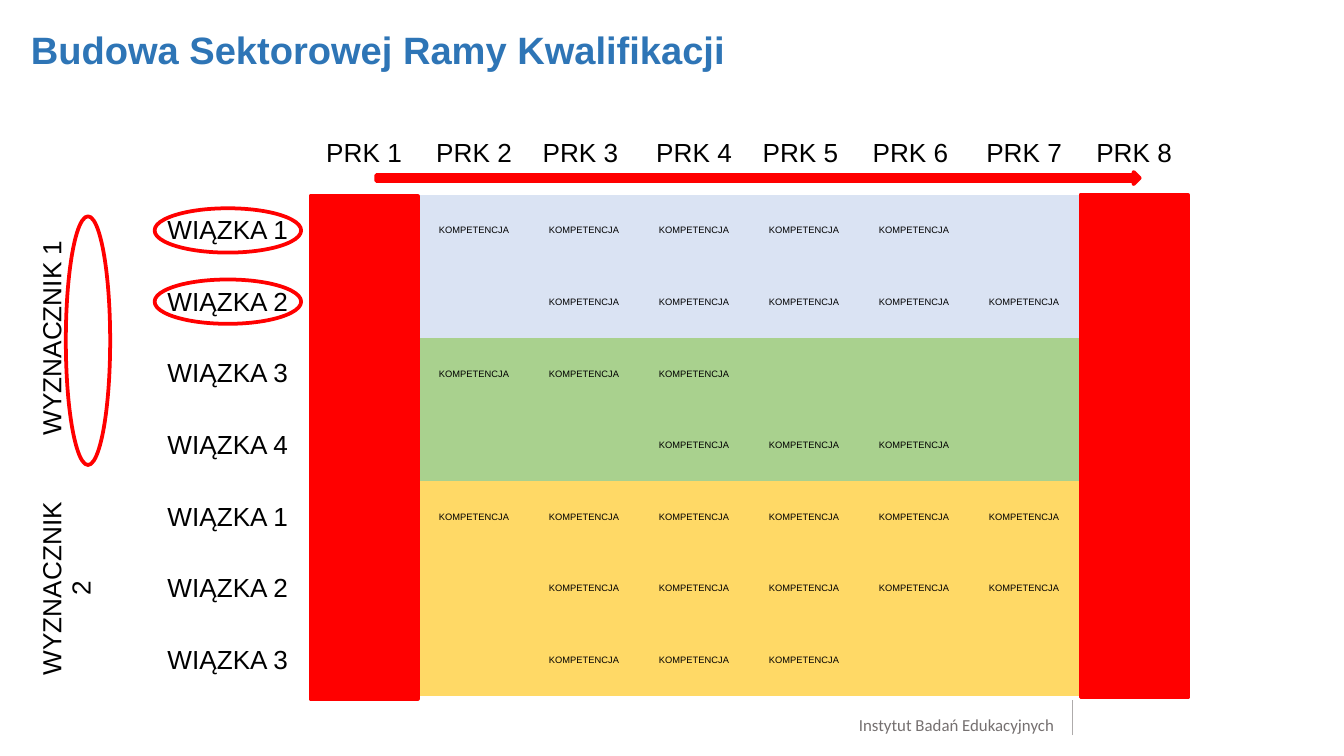
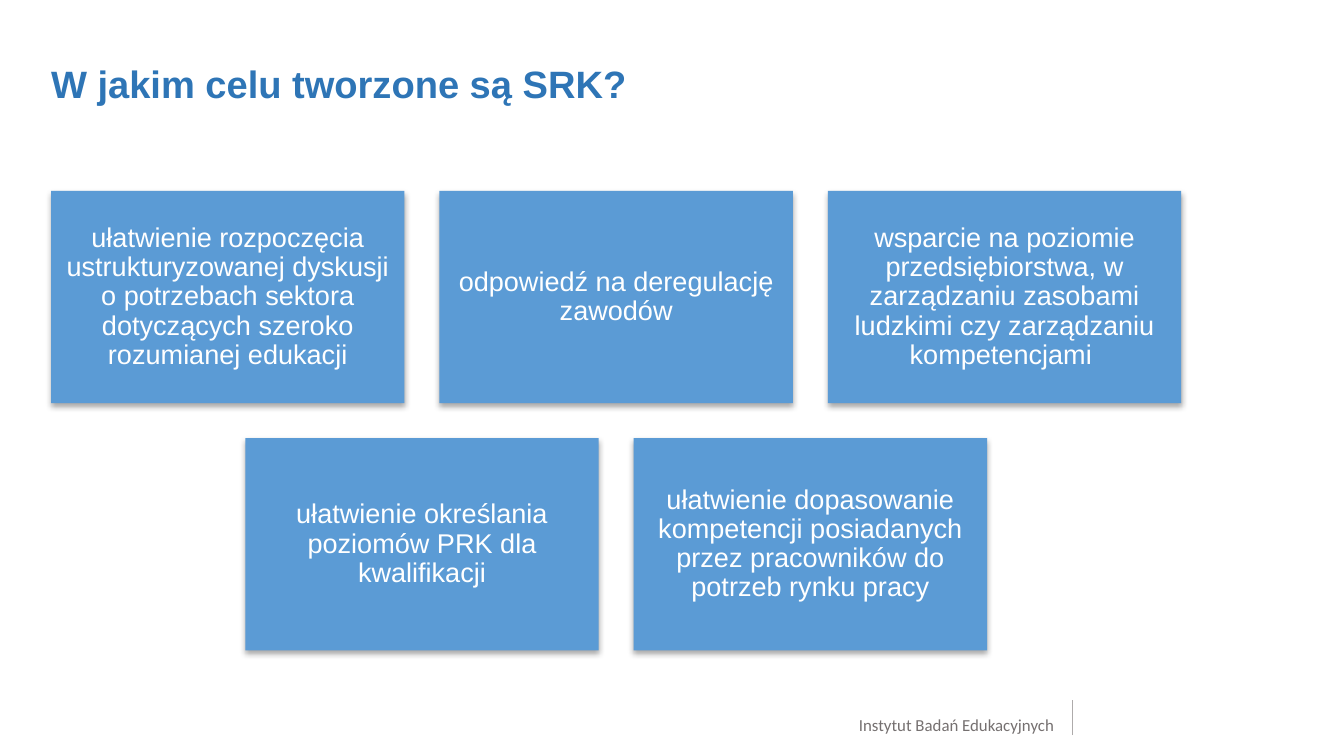
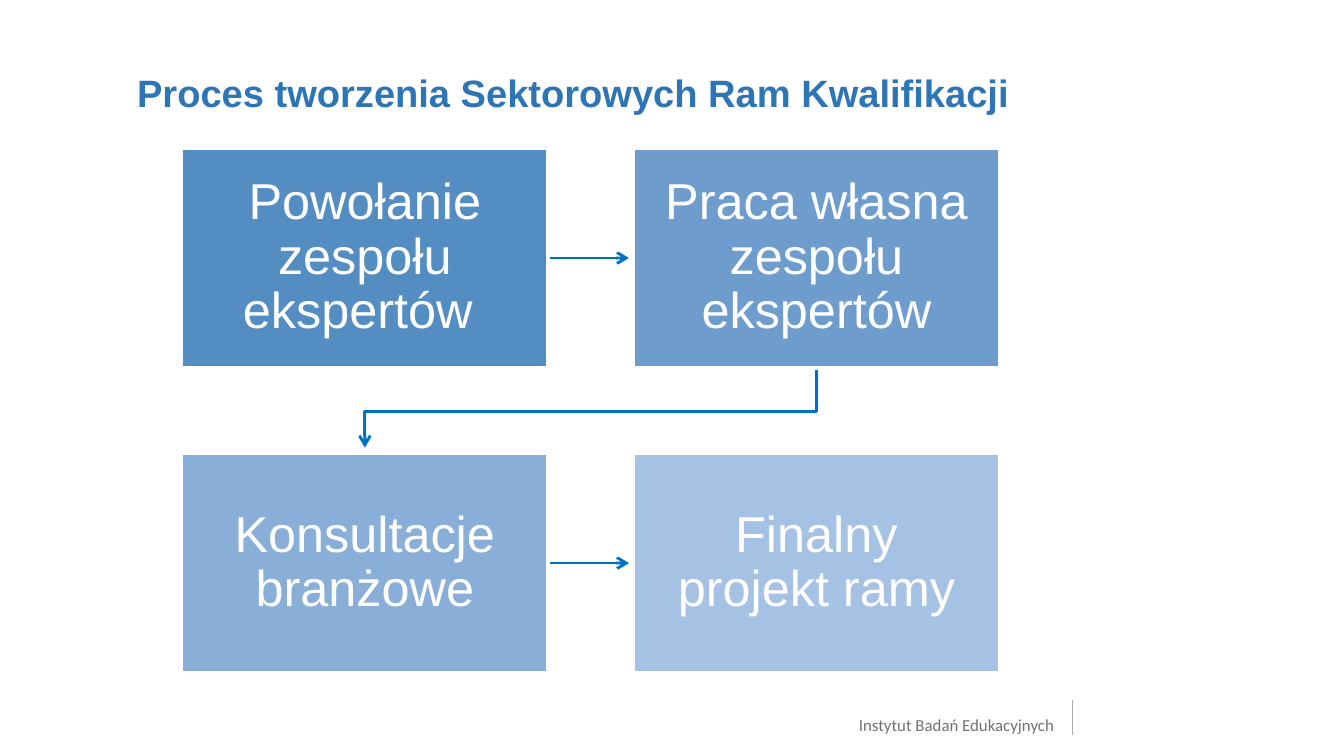
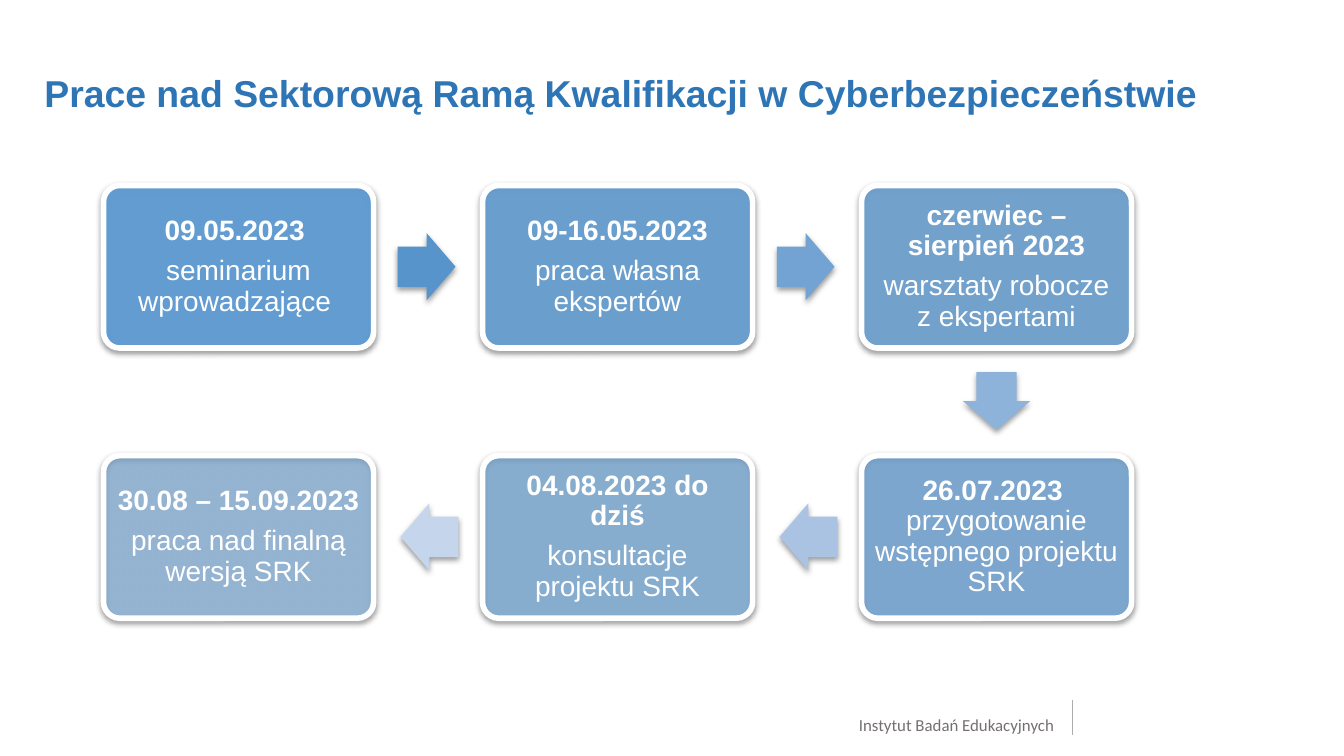
from lxml import etree
from pptx import Presentation
from pptx.dml.color import RGBColor
from pptx.enum.shapes import MSO_CONNECTOR, MSO_SHAPE
from pptx.enum.text import MSO_ANCHOR, MSO_AUTO_SIZE, PP_ALIGN
from pptx.oxml.ns import qn
from pptx.util import Inches, Pt

TITLE_BLUE = RGBColor(0x2E, 0x75, 0xB6)
BOX_BLUE = RGBColor(0x5B, 0x9B, 0xD5)
LINE_BLUE = RGBColor(0x00, 0x70, 0xC0)
FOOTER_GREY = RGBColor(0x75, 0x70, 0x70)
RULE_GREY = RGBColor(0xAE, 0xAB, 0xAB)
RED = RGBColor(0xFF, 0x00, 0x00)
WHITE = RGBColor(0xFF, 0xFF, 0xFF)
BLACK = RGBColor(0x00, 0x00, 0x00)
PALE_BLUE = RGBColor(0xDA, 0xE3, 0xF3)
GREEN = RGBColor(0xA9, 0xD1, 0x8E)
YELLOW = RGBColor(0xFF, 0xD9, 0x66)
PROCESS_BLUES = [RGBColor.from_string(c) for c in ("538DC1", "6E9DCD", "89AFD8", "A5C1E3")]
ARROW_BLUES = [RGBColor.from_string(c) for c in ("5794CB", "73A3D3", "8EB3DB", "AAC3E3", "C5D5EB")]

CENTER, LEFT, RIGHT = PP_ALIGN.CENTER, PP_ALIGN.LEFT, PP_ALIGN.RIGHT
TOP, MIDDLE = MSO_ANCHOR.TOP, MSO_ANCHOR.MIDDLE
RECTANGLE, ROUNDED = MSO_SHAPE.RECTANGLE, MSO_SHAPE.ROUNDED_RECTANGLE
OVAL, RIGHT_ARROW = MSO_SHAPE.OVAL, MSO_SHAPE.RIGHT_ARROW
STRAIGHT = MSO_CONNECTOR.STRAIGHT
NO_TABLE_STYLE = "{2D5ABB26-0587-4C30-8999-92F81FD0307C}"
TITLE_ONLY = 5

# Row label, first and last level with a competence, band colour
FRAMEWORK_ROWS = [
    ("WIĄZKA 1", 2, 6, PALE_BLUE),
    ("WIĄZKA 2", 3, 7, PALE_BLUE),
    ("WIĄZKA 3", 2, 4, GREEN),
    ("WIĄZKA 4", 4, 6, GREEN),
    ("WIĄZKA 1", 2, 7, YELLOW),
    ("WIĄZKA 2", 3, 7, YELLOW),
    ("WIĄZKA 3", 3, 5, YELLOW),
]
LEVELS = ["PRK 1", "PRK 2", "PRK 3 ", "PRK 4", "PRK 5 ", "PRK 6 ", "PRK 7", "PRK 8"]
PURPOSES = [
    ["ułatwienie rozpoczęcia ustrukturyzowanej dyskusji o potrzebach sektora "
     "dotyczących szeroko rozumianej edukacji",
     "odpowiedź na deregulację zawodów",
     "wsparcie na poziomie przedsiębiorstwa, w zarządzaniu zasobami ludzkimi "
     "czy zarządzaniu kompetencjami "],
    ["ułatwienie określania poziomów PRK dla kwalifikacji",
     "ułatwienie dopasowanie kompetencji posiadanych przez pracowników "
     "do potrzeb rynku pracy"],
]
PROCESS_STEPS = ["Powołanie zespołu ekspertów ", "Praca własna zespołu ekspertów",
                 "Konsultacje branżowe", "Finalny projekt ramy"]
# Each milestone is a list of paragraphs; a paragraph is a list of (text, bold)
MILESTONES = [
    [[("09.05.2023 ", True)], [("seminarium wprowadzające ", False)]],
    [[("09-16.05.2023", True)], [("praca własna ekspertów", False)]],
    [[("czerwiec – sierpień 2023", True)], [("warsztaty robocze z ekspertami", False)]],
    [[("26.07.2023 ", True), (" przygotowanie wstępnego projektu SRK", False)]],
    [[("04.08.2023 do dziś", True)], [("konsultacje projektu SRK", False)]],
    [[("30.08 – 15.09.2023 ", True)], [("praca nad finalną wersją SRK", False)]],
]


def add_element(parent, tag, **attributes):
    return etree.SubElement(parent, qn(tag), attributes)


def format_font(font, size, color, name="Arial", bold=False):
    font.size, font.name, font.bold = Pt(size), name, bold
    font.color.rgb = color


def set_margins(text_frame, margin):
    text_frame.margin_left = text_frame.margin_right = Inches(margin)
    text_frame.margin_top = text_frame.margin_bottom = Inches(margin)


def write_paragraphs(text_frame, paragraphs, size, margin):
    """Write white, centred paragraphs of (text, bold) runs."""
    text_frame.word_wrap = True
    text_frame.vertical_anchor = MIDDLE
    set_margins(text_frame, margin)
    for index, runs in enumerate(paragraphs):
        paragraph = text_frame.paragraphs[0] if index == 0 else text_frame.add_paragraph()
        paragraph.alignment = CENTER
        paragraph.line_spacing = 0.9
        if index < len(paragraphs) - 1:
            paragraph.space_after = Pt(5.3)
        for text, bold in runs:
            run = paragraph.add_run()
            run.text = text
            format_font(run.font, size, WHITE, bold=bold)


def add_shape(slide, kind, box, fill=None, line=None, width=2.0):
    shape = slide.shapes.add_shape(kind, *map(Inches, box))
    style_outline(shape, fill, line, width)
    return shape


def style_outline(shape, fill, line, width):
    if fill is None:
        shape.fill.background()
    else:
        shape.fill.solid()
        shape.fill.fore_color.rgb = fill
    if line is None:
        shape.line.fill.background()
    else:
        shape.line.color.rgb = line
        shape.line.width = Pt(width)
    shape.shadow.inherit = False


def add_shadow(shape, opacity, distance):
    effects = shape._element.spPr.find(qn("a:effectLst"))
    shadow = add_element(effects, "a:outerShdw", blurRad=str(Pt(3.1)), dist=str(Pt(distance)),
                         dir="5400000", rotWithShape="0")
    color = add_element(shadow, "a:srgbClr", val=str(BLACK))
    add_element(color, "a:alpha", val=str(opacity * 1000))


def set_opacity(shape, percent):
    color = shape._element.spPr.find(qn("a:solidFill")).find(qn("a:srgbClr"))
    add_element(color, "a:alpha", val=str(percent * 1000))


def add_line(slide, start, end, color, width):
    line = slide.shapes.add_connector(STRAIGHT, *map(Inches, start + end))
    line.line.color.rgb = color
    line.line.width = Pt(width)
    add_element(line._element.spPr, "a:effectLst")
    return line


def add_arrowhead(line):
    add_element(line.line._get_or_add_ln(), "a:tailEnd", type="arrow")


def add_footer(slide):
    box = slide.shapes.add_textbox(Inches(6.17), Inches(5.32), Inches(1.67), Inches(0.14))
    text_frame = box.text_frame
    text_frame.word_wrap = True
    set_margins(text_frame, 0)
    text_frame.text = "Instytut Badań Edukacyjnych"
    paragraph = text_frame.paragraphs[0]
    paragraph.alignment = RIGHT
    format_font(paragraph.runs[0].font, 9, FOOTER_GREY, "Calibri")
    add_line(slide, (7.98, 5.47), (7.98, 5.21), RULE_GREY, 0.75)


def add_titled_slide(presentation, text, left, top, size=20.4):
    slide = presentation.slides.add_slide(presentation.slide_layouts[TITLE_ONLY])
    title = slide.shapes.title
    title.left, title.top = Inches(left), Inches(top)
    title.width, title.height = Inches(8.62), Inches(0.58)
    text_frame = title.text_frame
    text_frame.text = text
    text_frame.word_wrap = True
    text_frame.auto_size = MSO_AUTO_SIZE.NONE
    text_frame.vertical_anchor = TOP
    set_margins(text_frame, 0)
    text_frame.paragraphs[0].alignment = LEFT
    format_font(text_frame.paragraphs[0].runs[0].font, size, TITLE_BLUE, bold=True)
    add_footer(slide)
    return slide


def write_cell(cell, text, size=14):
    cell.text_frame.text = text
    cell.vertical_anchor = MIDDLE
    paragraph = cell.text_frame.paragraphs[0]
    paragraph.alignment = CENTER
    format_font(paragraph.runs[0].font, size, BLACK)


def add_framework_table(slide, left, top, width, height):
    determinant_width, label_width, header_height = 0.86, 1.21, 0.62
    level_width = (width - determinant_width - label_width) / len(LEVELS)
    row_height = (height - header_height) / len(FRAMEWORK_ROWS)
    column_widths = [determinant_width, label_width] + [level_width] * len(LEVELS)
    row_heights = [header_height] + [row_height] * len(FRAMEWORK_ROWS)
    table = slide.shapes.add_table(
        len(row_heights), len(column_widths),
        *map(Inches, (left, top, width, height))).table
    table.first_row = table.horz_banding = False
    table._tbl.tblPr.find(qn("a:tableStyleId")).text = NO_TABLE_STYLE
    for column, column_width in zip(table.columns, column_widths):
        column.width = Inches(column_width)
    for row, height_of_row in zip(table.rows, row_heights):
        row.height = Inches(height_of_row)
    for cell in table.iter_cells():
        cell.fill.background()

    table.cell(0, 0).merge(table.cell(0, 1))
    for column, level in enumerate(LEVELS, 2):
        write_cell(table.cell(0, column), level)
    for first, last, text in [(1, 4, "WYZNACZNIK 1"), (5, 7, "WYZNACZNIK 2")]:
        cell = table.cell(first, 0)
        cell.merge(table.cell(last, 0))
        write_cell(cell, text)
        cell._tc.get_or_add_tcPr().set("vert", "vert270")
    for row, (label, first, last, color) in enumerate(FRAMEWORK_ROWS, 1):
        write_cell(table.cell(row, 1), label)
        for level in range(1, len(LEVELS) + 1):
            cell = table.cell(row, level + 1)
            cell.fill.solid()
            cell.fill.fore_color.rgb = color
            if first <= level <= last:
                write_cell(cell, "KOMPETENCJA", 5)


def add_framework_marks(slide, left, top):
    """Ring the first labels and mark the levels of the table at left, top."""
    add_shape(slide, OVAL, (left + 0.26, top + 0.78, 0.33, 1.85), line=RED)
    for y in (0.34, 0.87):
        ring = add_shape(slide, OVAL, (left + 1.3, top + y, 0.33, 1.09), line=RED)
        ring.rotation = 90
    add_shape(slide, RIGHT_ARROW, (left + 2.57, top + 0.45, 5.68, 0.09), RED, RED)
    for x, y in [(2.08, 0.63), (7.81, 0.62)]:
        add_shape(slide, RECTANGLE, (left + x, top + y, 0.8, 3.74), RED, RED)


def add_purpose_grid(slide, left, top):
    """Place rows of boxes, each row centred under the widest one."""
    pitch_x, pitch_y = 2.89, 1.84
    most = max(map(len, PURPOSES))
    for row, texts in enumerate(PURPOSES):
        row_left = left + (most - len(texts)) * pitch_x / 2
        for column, text in enumerate(texts):
            box = (row_left + column * pitch_x, top + row * pitch_y, 2.63, 1.58)
            shape = add_shape(slide, RECTANGLE, box, BOX_BLUE)
            add_shadow(shape, 35, 1.8)
            write_paragraphs(shape.text_frame, [[(text, False)]], 14.5, 0.06)


def add_process(slide, left, top):
    width, height, pitch_x, pitch_y = 2.73, 1.64, 3.36, 2.27
    for row in range(2):
        y = top + row * pitch_y + height / 2
        arrow = add_line(slide, (left + width, y), (left + width + 0.6, y), LINE_BLUE, 1.5)
        add_arrowhead(arrow)

    start_x, end_x = left + pitch_x + width / 2, left + width / 2
    start_y = top + height
    builder = slide.shapes.build_freeform(Inches(start_x), Inches(start_y))
    corners = [(start_x, start_y + 0.32), (end_x, start_y + 0.32), (end_x, start_y + 0.59)]
    builder.add_line_segments([tuple(map(Inches, corner)) for corner in corners], close=False)
    elbow = builder.convert_to_shape()
    style_outline(elbow, None, LINE_BLUE, 1.5)
    add_arrowhead(elbow)

    for index, (text, color) in enumerate(zip(PROCESS_STEPS, PROCESS_BLUES)):
        row, column = divmod(index, 2)
        box = (left + column * pitch_x, top + row * pitch_y, width, height)
        shape = add_shape(slide, RECTANGLE, box, color, WHITE)
        write_paragraphs(shape.text_frame, [[(text, False)]], 27, 0.21)


def add_milestone(slide, box, paragraphs, opacity):
    """Draw a translucent card with its text above it, clear of the card's shadow."""
    card = add_shape(slide, ROUNDED, box, BOX_BLUE, WHITE, 3)
    card.adjustments[0] = 0.1
    set_opacity(card, opacity)
    add_shadow(card, 38, 1.6)
    left, top, width, height = box
    inset = 0.04
    label = slide.shapes.add_textbox(
        Inches(left + inset), Inches(top + inset),
        Inches(width - 2 * inset), Inches(height - 2 * inset))
    write_paragraphs(label.text_frame, paragraphs, 15, 0.06)


def add_timeline(slide, left, top):
    """Lay milestones out to the right, down, then back to the left."""
    width, height, pitch_x, pitch_y, columns = 2.01, 1.21, 2.82, 2.01, 3
    arrow_width, arrow_height = 0.43, 0.5
    for index, paragraphs in enumerate(MILESTONES):
        row, column = divmod(index, columns)
        turning = column == columns - 1
        if row == 1:
            column = columns - 1 - column
        x, y = left + column * pitch_x, top + row * pitch_y
        add_milestone(slide, (x, y, width, height), paragraphs, 90 - 8 * index)
        if index == len(MILESTONES) - 1:
            break
        if turning:
            step_x, step_y, rotation = 0, 1, 90
        elif row == 0:
            step_x, step_y, rotation = 1.4, 0, 0
        else:
            step_x, step_y, rotation = -1.4, 0, 180
        box = (x + (width - arrow_width) / 2 + step_x,
               y + (height - arrow_height) / 2 + step_y, arrow_width, arrow_height)
        arrow = add_shape(slide, RIGHT_ARROW, box, ARROW_BLUES[index])
        arrow.adjustments[0], arrow.adjustments[1] = 0.6, 0.5
        arrow.rotation = rotation
        add_shadow(arrow, 38, 1.6)


def main():
    presentation = Presentation()
    presentation.slide_width = Inches(10)
    presentation.slide_height = Inches(10) * 9 // 16

    slide = add_titled_slide(presentation, "Budowa Sektorowej Ramy Kwalifikacji", 0.23, 0.2)
    add_framework_table(slide, 0.23, 0.83, 8.62, 4.35)
    add_framework_marks(slide, 0.23, 0.83)

    slide = add_titled_slide(presentation, "W jakim celu tworzone są SRK?", 0.38, 0.45)
    add_purpose_grid(slide, 0.38, 1.42)

    slide = add_titled_slide(
        presentation, "Proces tworzenia Sektorowych Ram Kwalifikacji", 1.02, 0.52)
    add_process(slide, 1.35, 1.1)

    slide = add_titled_slide(
        presentation, "Prace nad Sektorową Ramą Kwalifikacji w Cyberbezpieczeństwie",
        0.33, 0.52, 20)
    add_timeline(slide, 0.77, 1.38)

    presentation.save("out.pptx")


if __name__ == "__main__":
    main()
